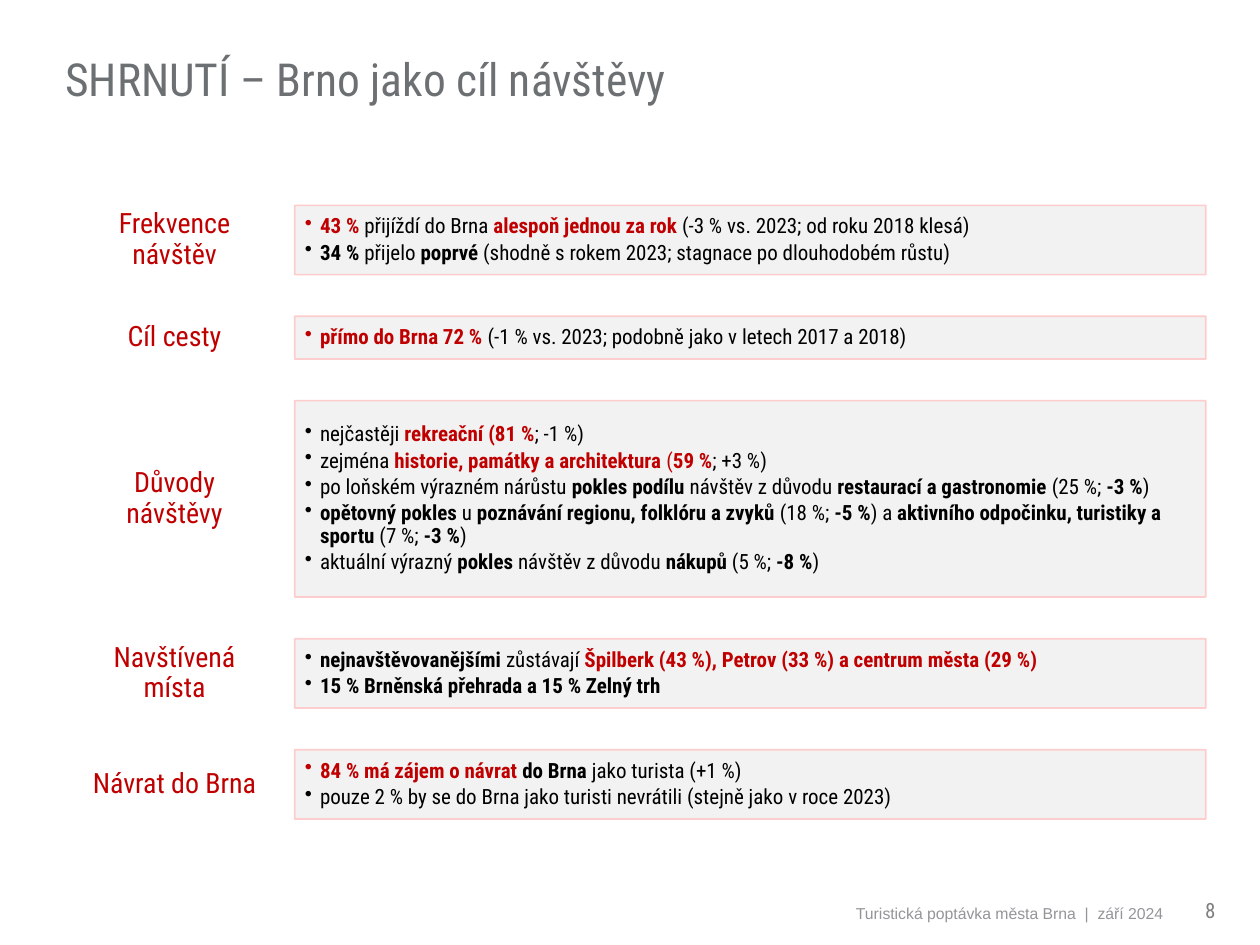
import lxml.etree
import pptx
import pptx.dml.color
import pptx.enum.shapes
import pptx.enum.text
import pptx.oxml.ns
import pptx.util

Inches = pptx.util.Inches
Pt = pptx.util.Pt
Align = pptx.enum.text.PP_ALIGN
Anchor = pptx.enum.text.MSO_ANCHOR
qn = pptx.oxml.ns.qn

CONDENSED = "Roboto Condensed"
RED_COLOR = "C00000"
PLAIN = ("000000", False)
BOLD = ("000000", True)
RED = (RED_COLOR, True)
RED_PLAIN = (RED_COLOR, False)

PANEL_LEFT, PANEL_WIDTH = 2.34, 7.23
LABEL_LEFT, LABEL_WIDTH = 0.59, 1.59
FIRST_TOP, TOPIC_GAP = 1.63, 0.33

TOPICS = [
    ("Frekvence návštěv", 0.55, [
        [("43 % ", RED), ("přijíždí do Brna ", PLAIN), ("alespoň jednou za rok ", RED),
         ("(-3 % vs. 2023; od roku 2018 klesá)", PLAIN)],
        [("34 %", BOLD), (" přijelo ", PLAIN), ("poprvé", BOLD),
         (" (shodně s rokem 2023; stagnace po dlouhodobém růstu)", PLAIN)],
    ]),
    ("Cíl cesty", 0.34, [
        [("přímo do Brna 72 % ", RED),
         ("(-1 % vs. 2023; podobně jako v letech 2017 a 2018)", PLAIN)],
    ]),
    ("Důvody návštěvy", 1.56, [
        [("nejčastěji ", PLAIN), ("rekreační (81 %", RED), ("; -1 %)", PLAIN)],
        [("zejména ", PLAIN), ("historie, památky a architektura ", RED),
         ("(", RED_PLAIN), ("59 %", RED), ("; +3 %)", PLAIN)],
        [("po loňském výrazném nárůstu ", PLAIN), ("pokles podílu ", BOLD),
         ("návštěv z důvodu ", PLAIN), ("restaurací a gastronomie ", BOLD),
         ("(25 %; ", PLAIN), ("-3 %", BOLD), (")", PLAIN)],
        [("opětovný pokles ", BOLD), ("u ", PLAIN),
         ("poznávání regionu, folklóru a zvyků ", BOLD), ("(18 %; ", PLAIN),
         ("-5 %", BOLD), (") a ", PLAIN),
         ("aktivního odpočinku, turistiky a sportu ", BOLD), ("(7 %; ", PLAIN),
         ("-3 %", BOLD), (")", PLAIN)],
        [("aktuální výrazný ", PLAIN), ("pokles ", BOLD), ("návštěv z důvodu ", PLAIN),
         ("nákupů", BOLD), (" (5 %;", PLAIN), (" -8 %", BOLD), (")", PLAIN)],
    ]),
    ("Navštívená místa", 0.55, [
        [("nejnavštěvovanějšími ", BOLD), ("zůstávají ", PLAIN),
         ("Špilberk (43 %), Petrov (33 %) a centrum města (29 %)", RED)],
        [("15 % Brněnská přehrada a 15 % Zelný trh", BOLD)],
    ]),
    ("Návrat do Brna", 0.55, [
        [("84 % má zájem o návrat ", RED), ("do Brna ", BOLD),
         ("jako turista (+1 %)", PLAIN)],
        [("pouze 2 % by se do Brna jako turisti nevrátili (stejně jako v roce 2023)", PLAIN)],
    ]),
]


def rgb(value):
    return pptx.dml.color.RGBColor.from_string(value)


def style_run(run, size, color, bold=False, font=CONDENSED):
    run.font.name = font
    run.font.size = Pt(size)
    run.font.bold = bold
    run.font.color.rgb = rgb(color)


def set_frame(frame, anchor, side, edge):
    frame.word_wrap = True
    frame.vertical_anchor = anchor
    frame.margin_left = frame.margin_right = Inches(side)
    frame.margin_top = frame.margin_bottom = Inches(edge)


def add_text(slide, text, box, size, color, align=Align.LEFT, anchor=Anchor.MIDDLE,
             font=CONDENSED, side=0.1, edge=0.05, spacing=None):
    frame = slide.shapes.add_textbox(*map(Inches, box)).text_frame
    set_frame(frame, anchor, side, edge)
    frame.text = text
    paragraph = frame.paragraphs[0]
    paragraph.alignment = align
    paragraph.line_spacing = spacing
    style_run(paragraph.runs[0], size, color, font=font)


def add_finding(paragraph, pieces):
    paragraph.level = 1
    paragraph.alignment = Align.LEFT
    paragraph.line_spacing = 0.9
    paragraph.space_after = Pt(2.1)
    properties = paragraph._p.get_or_add_pPr()
    properties.set("marL", str(Inches(0.12)))
    properties.set("indent", str(Inches(-0.12)))
    lxml.etree.SubElement(properties, qn("a:buChar")).set("char", "•")
    for text, (color, bold) in pieces:
        run = paragraph.add_run()
        run.text = text
        style_run(run, 12, color, bold)


def add_panel(slide, top, height, findings):
    panel = slide.shapes.add_shape(
        pptx.enum.shapes.MSO_SHAPE.RECTANGLE,
        Inches(PANEL_LEFT), Inches(top), Inches(PANEL_WIDTH), Inches(height))
    panel.shadow.inherit = False
    panel.fill.solid()
    panel.fill.fore_color.rgb = rgb("F2F2F2")
    panel.line.color.rgb = rgb("FFC8C8")
    panel.line.width = Pt(1)
    border_color = panel.line._ln.find(".//" + qn("a:srgbClr"))
    lxml.etree.SubElement(border_color, qn("a:alpha")).set("val", "90000")
    frame = panel.text_frame
    set_frame(frame, Anchor.MIDDLE, 0.08, 0.08)
    for index, pieces in enumerate(findings):
        paragraph = frame.add_paragraph() if index else frame.paragraphs[0]
        add_finding(paragraph, pieces)


def add_topic(slide, top, name, height, findings):
    add_panel(slide, top, height, findings)
    label_height = max(height, 0.87)
    label_top = top + (height - label_height) / 2
    add_text(slide, name, (LABEL_LEFT, label_top, LABEL_WIDTH, label_height), 16, RED_COLOR,
             align=Align.CENTER, side=0.12, edge=0.08, spacing=0.9)


def main():
    presentation = pptx.Presentation()
    presentation.slide_width = Inches(10)
    presentation.slide_height = Inches(7.5)
    slide = presentation.slides.add_slide(presentation.slide_layouts[6])

    add_text(slide, "Turistická poptávka města Brna  |  září 2024", (0.49, 6.98, 8.84, 0.39),
             9, "939598", align=Align.RIGHT, anchor=Anchor.BOTTOM, font="Arial")
    add_text(slide, "8", (9.33, 6.98, 0.55, 0.39), 12, "808080",
             align=Align.CENTER, anchor=Anchor.BOTTOM)
    add_text(slide, "SHRNUTÍ – Brno jako cíl návštěvy", (0.42, 0.13, 7.17, 0.99), 26, "6D7073")

    top = FIRST_TOP
    for name, height, findings in TOPICS:
        add_topic(slide, top, name, height, findings)
        top += height + TOPIC_GAP

    presentation.save("out.pptx")


if __name__ == "__main__":
    main()
